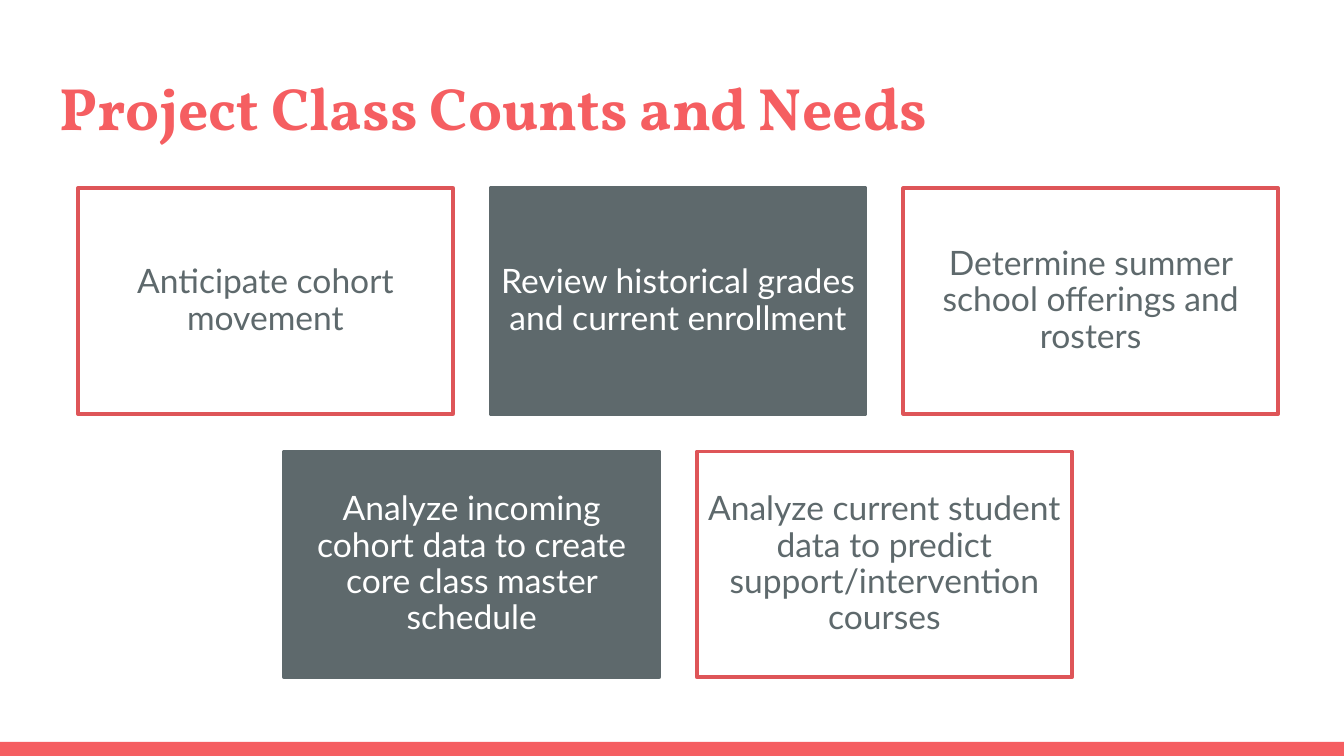
from dataclasses import dataclass

from pptx import Presentation
from pptx.dml.color import RGBColor
from pptx.enum.shapes import MSO_SHAPE
from pptx.enum.text import MSO_ANCHOR, PP_ALIGN
from pptx.util import Inches, Pt

COLORS = {
    "coral": "F55E61",
    "border": "DE5558",
    "slate": "5E696C",
    "white": "FFFFFF",
}
SLIDE_W = 10
SLIDE_H = SLIDE_W * 9 / 16
CARD_W, CARD_H, GAP = 2.79, 1.68, 0.28
GRID_LEFT, GRID_TOP = 0.58, 1.4


@dataclass
class CardStyle:
    fill: str
    line: str
    text: str


OUTLINED = CardStyle("white", "border", "slate")
FILLED = CardStyle("slate", "slate", "white")


@dataclass
class Card:
    text: str
    style: CardStyle


ROWS = [
    [
        Card("Anticipate cohort movement", OUTLINED),
        Card("Review historical grades and current enrollment", FILLED),
        Card("Determine summer school offerings and rosters", OUTLINED),
    ],
    [
        Card("Analyze incoming cohort data to create core class master schedule", FILLED),
        Card("Analyze current student data to predict support/intervention courses", OUTLINED),
    ],
]


def rgb(name: str) -> RGBColor:
    return RGBColor.from_string(COLORS[name])


def add_rect(s, left: float, top: float, width: float, height: float, fill: str):
    sp = s.shapes.add_shape(
        MSO_SHAPE.RECTANGLE, Inches(left), Inches(top), Inches(width), Inches(height)
    )
    sp.shadow.inherit = False
    sp.fill.solid()
    sp.fill.fore_color.rgb = rgb(fill)
    sp.line.fill.background()
    return sp


def set_margins(tf, inset: float) -> None:
    tf.margin_left = tf.margin_right = Inches(inset)
    tf.margin_top = tf.margin_bottom = Inches(inset)


def add_run(p, text: str, font: str, size: int, color: str, bold: bool = False) -> None:
    r = p.add_run()
    r.text = text
    r.font.name = font
    r.font.size = Pt(size)
    r.font.bold = bold
    r.font.color.rgb = rgb(color)


def set_title(s, text: str) -> None:
    sp = s.shapes.title
    sp.left, sp.top = Inches(0.34), Inches(0.43)
    sp.width, sp.height = Inches(9.32), Inches(0.68)
    tf = sp.text_frame
    tf.word_wrap = True
    tf.vertical_anchor = MSO_ANCHOR.TOP
    set_margins(tf, 0.1)
    p = tf.paragraphs[0]
    p.alignment = PP_ALIGN.LEFT
    add_run(p, text, "Vollkorn", 32, "coral", bold=True)


def add_card(s, card: Card, left: float, top: float) -> None:
    sp = add_rect(s, left, top, CARD_W, CARD_H, card.style.fill)
    sp.line.color.rgb = rgb(card.style.line)
    sp.line.width = Pt(2)
    tf = sp.text_frame
    tf.word_wrap = True
    tf.vertical_anchor = MSO_ANCHOR.MIDDLE
    set_margins(tf, 0.07)
    p = tf.paragraphs[0]
    p.alignment = PP_ALIGN.CENTER
    p.line_spacing = 0.9
    add_run(p, card.text, "Lato", 18, card.style.text)


def add_cards(s, rows: list[list[Card]]) -> None:
    columns = max(len(row) for row in rows)
    for i, row in enumerate(rows):
        left = GRID_LEFT + (columns - len(row)) * (CARD_W + GAP) / 2
        top = GRID_TOP + i * (CARD_H + GAP)
        for j, card in enumerate(row):
            add_card(s, card, left + j * (CARD_W + GAP), top)


def main() -> None:
    prs = Presentation()
    prs.slide_width, prs.slide_height = Inches(SLIDE_W), Inches(SLIDE_H)
    s = prs.slides.add_slide(prs.slide_layouts[5])
    add_rect(s, 0, 5.52, SLIDE_W, 0.11, "coral")
    set_title(s, "Project Class Counts and Needs")
    add_cards(s, ROWS)
    prs.save("out.pptx")


if __name__ == "__main__":
    main()
